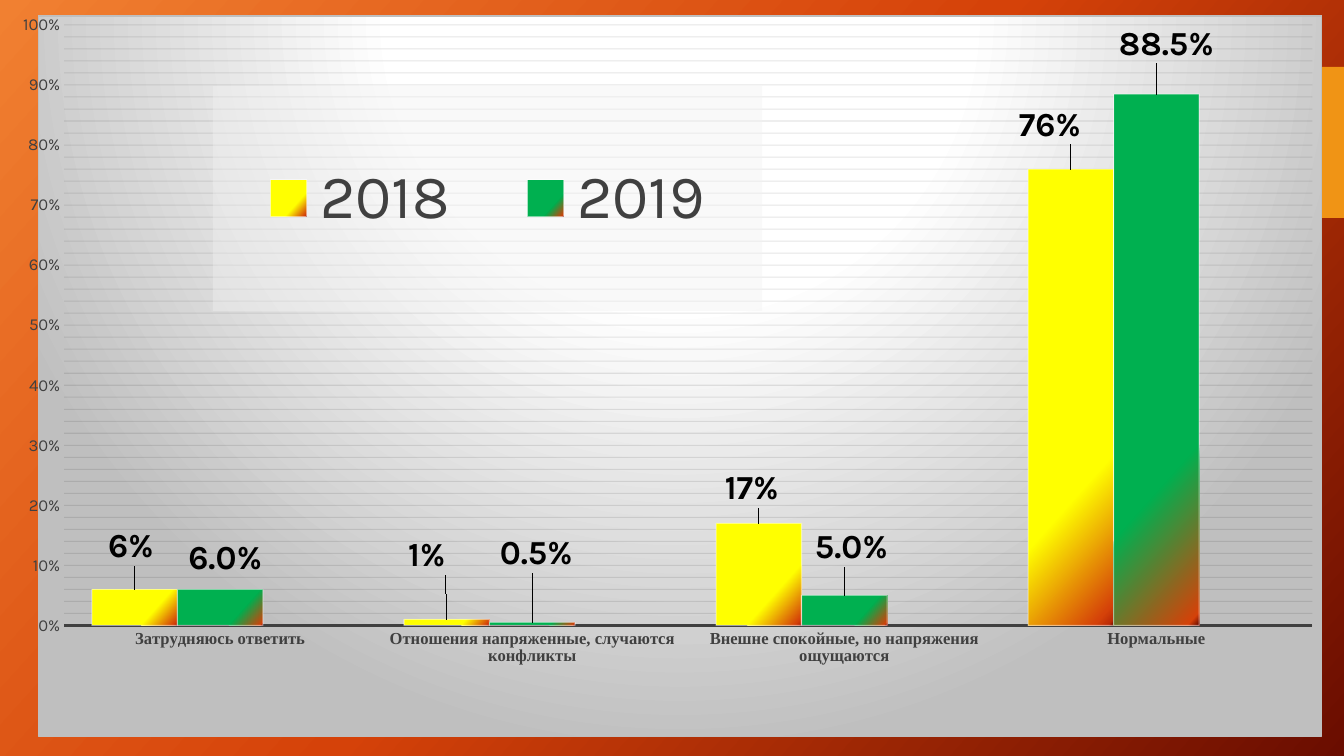
from lxml import etree
from pptx import Presentation
from pptx import util as u
from pptx.chart.data import CategoryChartData
from pptx.dml.color import RGBColor
from pptx.enum import chart as charts, shapes
from pptx.oxml import parse_xml
from pptx.oxml.ns import nsdecls, qn

PX = 9072
CHART_WIDTH, CHART_HEIGHT = 1278, 721
THEME = {
    "font": "Karla", "category_font": "Times New Roman",
    "axis_size": 12, "label_size": 24, "legend_size": 44,
    "accent": "F09415", "text": "404040", "label": "000000",
    "grid": "0D0D0D", "border": "BFBFBF", "outline": "FFFFFF",
    "legend_fill": "F2F2F2", "empty": "4BAF73",
    "background": [(0, "F18031"), (50, "D54209"), (100, "6A0D00")],
    "chart_fill": [(0, "FFFFFF"), (39, "FFFFFF"), (100, "BFBFBF")],
    "2018": [(69, "FFFF00"), (96, "D54209"), (99, "BC2B06"), (100, "6A0D00")],
    "2019": [(71, "00B050"), (98, "D54209"), (100, "6A0D00")],
}
LINEAR = '<a:lin ang="2520000" scaled="0"/>'
RADIAL = '<a:path path="circle"><a:fillToRect l="50000" t="-80000" r="50000" b="180000"/></a:path>'
CATEGORIES = [
    "Затрудняюсь ответить",
    "Отношения напряженные, случаются конфликты",
    "Внешне спокойные, но напряжения ощущаются",
    "Нормальные",
]
SERIES = {
    "2018": ("0%", [0.06, 0.01, 0.17, 0.76], [(-4, -66), (-20, -87), (-7, -58), (-21, -67)]),
    "2019": ("0.0%", [0.06, 0.005, 0.05, 0.885], [(5, -54), (4, -92), (7, -71), (10, -73)]),
}


def gradient(stops, direction):
    stop_xml = "".join(
        f'<a:gs pos="{position * 1000}"><a:srgbClr val="{color}"/></a:gs>'
        for position, color in stops
    )
    return f'<a:gradFill {nsdecls("a")} rotWithShape="1"><a:gsLst>{stop_xml}</a:gsLst>{direction}</a:gradFill>'


def set_layout(parent, index, box, head=""):
    for old_layout in parent.findall(qn("c:layout")):
        parent.remove(old_layout)
    sizes = (CHART_WIDTH, CHART_HEIGHT) * 2
    values = "".join(
        f'<c:{name} val="{length / size:.4f}"/>' for name, length, size in zip("xywh", box, sizes)
    )
    parent.insert(index, parse_xml(
        f'<c:layout {nsdecls("c")}><c:manualLayout>{head}{values}</c:manualLayout></c:layout>'
    ))


presentation = Presentation()
presentation.slide_width = 1344 * PX
presentation.slide_height = 756 * PX
slide = presentation.slides.add_slide(presentation.slide_layouts[6])

slide.background.fill.solid()
background_fill = slide.element.xpath("p:cSld/p:bg/p:bgPr/a:solidFill")[0]
background_fill.getparent().replace(background_fill, parse_xml(gradient(THEME["background"], LINEAR)))

side_tab = slide.shapes.add_shape(
    shapes.MSO_SHAPE.RECTANGLE, 1167 * PX, 67 * PX, 177 * PX, 151 * PX
)
side_tab.shadow.inherit = False
side_tab.fill.solid()
side_tab.fill.fore_color.rgb = RGBColor.from_string(THEME["accent"])
side_tab.line.fill.background()

chart_data = CategoryChartData(number_format="0%")
chart_data.categories = CATEGORIES
for name, (number_format, values, offsets) in SERIES.items():
    chart_data.add_series(name, values, number_format)
chart_data.add_series("Series 3", [None] * len(CATEGORIES))
chart = slide.shapes.add_chart(
    charts.XL_CHART_TYPE.COLUMN_CLUSTERED, 23 * PX, 15 * PX, 1299 * PX, 722 * PX, chart_data
).chart
chart.has_title = False
chart.font.name = THEME["font"]
chart.font.size = u.Pt(10)
chart_space = chart.element

plot = chart.plots[0]
plot.gap_width = 65
plot.overlap = 0
plot.vary_by_categories = False

for series in plot.series:
    series.invert_if_negative = False
    series.format.fill.solid()
    series.format.fill.fore_color.rgb = RGBColor.from_string(THEME["empty"])
    series.format.line.color.rgb = RGBColor.from_string(THEME["outline"])
    series.format.line.width = u.Pt(0.75)

for index, (name, (number_format, values, offsets)) in enumerate(SERIES.items()):
    series = plot.series[index]
    series_element = chart_space.xpath(".//c:ser")[index]
    solid_fill = series_element.xpath("c:spPr/a:solidFill")[0]
    solid_fill.getparent().replace(solid_fill, parse_xml(gradient(THEME[name], LINEAR)))
    labels = series.data_labels
    labels.show_value = True
    labels.number_format = number_format
    labels.number_format_is_linked = False
    point_labels = [series.points[number].data_label for number in range(len(values))]
    for label in [labels, *point_labels]:
        label.position = charts.XL_LABEL_POSITION.INSIDE_END
        label.font.name = THEME["font"]
        label.font.size = u.Pt(THEME["label_size"])
        label.font.bold = True
        label.font.color.rgb = RGBColor.from_string(THEME["label"])
    for label_element, offset in zip(series_element.xpath("c:dLbls/c:dLbl"), offsets):
        set_layout(label_element, 1, offset)

category_axis, value_axis = chart.category_axis, chart.value_axis
for axis, font_name in ((category_axis, THEME["category_font"]), (value_axis, THEME["font"])):
    axis_font = axis.tick_labels.font
    axis_font.name = font_name
    axis_font.size = u.Pt(THEME["axis_size"])
    axis_font.bold = axis is category_axis
    axis_font.color.rgb = RGBColor.from_string(THEME["text"])
    axis.major_tick_mark = charts.XL_TICK_MARK.NONE
category_axis.format.line.color.rgb = RGBColor.from_string(THEME["text"])
category_axis.format.line.width = u.Pt(1.5)
value_axis.format.line.fill.background()
value_axis.minimum_scale = 0
value_axis.maximum_scale = 1
value_axis.major_unit = 0.1
value_axis.minor_unit = 0.02
value_axis.tick_labels.number_format = "0%"
value_axis.tick_labels.number_format_is_linked = False
value_axis.has_major_gridlines = True
value_axis.has_minor_gridlines = True
grid_parts = chart_space.xpath(".//c:majorGridlines | .//c:minorGridlines")
for grid in grid_parts:
    grid.append(parse_xml(
        f'<c:spPr {nsdecls("c", "a")}><a:ln w="9525"><a:solidFill>'
        f'<a:srgbClr val="{THEME["grid"]}"><a:alpha val="10000"/></a:srgbClr>'
        '</a:solidFill></a:ln></c:spPr>'
    ))
for outline_color in chart_space.xpath(".//c:ser/c:spPr/a:ln//a:srgbClr"):
    etree.SubElement(outline_color, qn("a:alpha"), val="50000")

chart.has_legend = True
legend = chart.legend
legend.position = charts.XL_LEGEND_POSITION.BOTTOM
legend.include_in_layout = False
legend.font.name = THEME["font"]
legend.font.size = u.Pt(THEME["legend_size"])
legend.font.color.rgb = RGBColor.from_string(THEME["text"])
legend_element = chart_space.xpath("c:chart/c:legend")[0]
set_layout(legend_element, 1, (174, 70, 547, 225), '<c:xMode val="edge"/><c:yMode val="edge"/>')
legend_element.insert(1, parse_xml(
    f'<c:legendEntry {nsdecls("c")}><c:idx val="2"/><c:delete val="1"/></c:legendEntry>'
))
legend_element.find(qn("c:overlay")).addnext(parse_xml(
    f'<c:spPr {nsdecls("c", "a")}><a:solidFill><a:srgbClr val="{THEME["legend_fill"]}">'
    '<a:alpha val="39000"/></a:srgbClr></a:solidFill><a:ln><a:noFill/></a:ln></c:spPr>'
))

set_layout(
    chart_space.xpath("c:chart/c:plotArea")[0], 0, (26, 9, 1243, 601),
    '<c:layoutTarget val="inner"/><c:xMode val="edge"/><c:yMode val="edge"/>',
)
chart_space.find(qn("c:chart")).addnext(parse_xml(
    f'<c:spPr {nsdecls("c", "a")}>{gradient(THEME["chart_fill"], RADIAL)}'
    f'<a:ln w="9525"><a:solidFill><a:srgbClr val="{THEME["border"]}"/></a:solidFill></a:ln></c:spPr>'
))

presentation.save("out.pptx")
